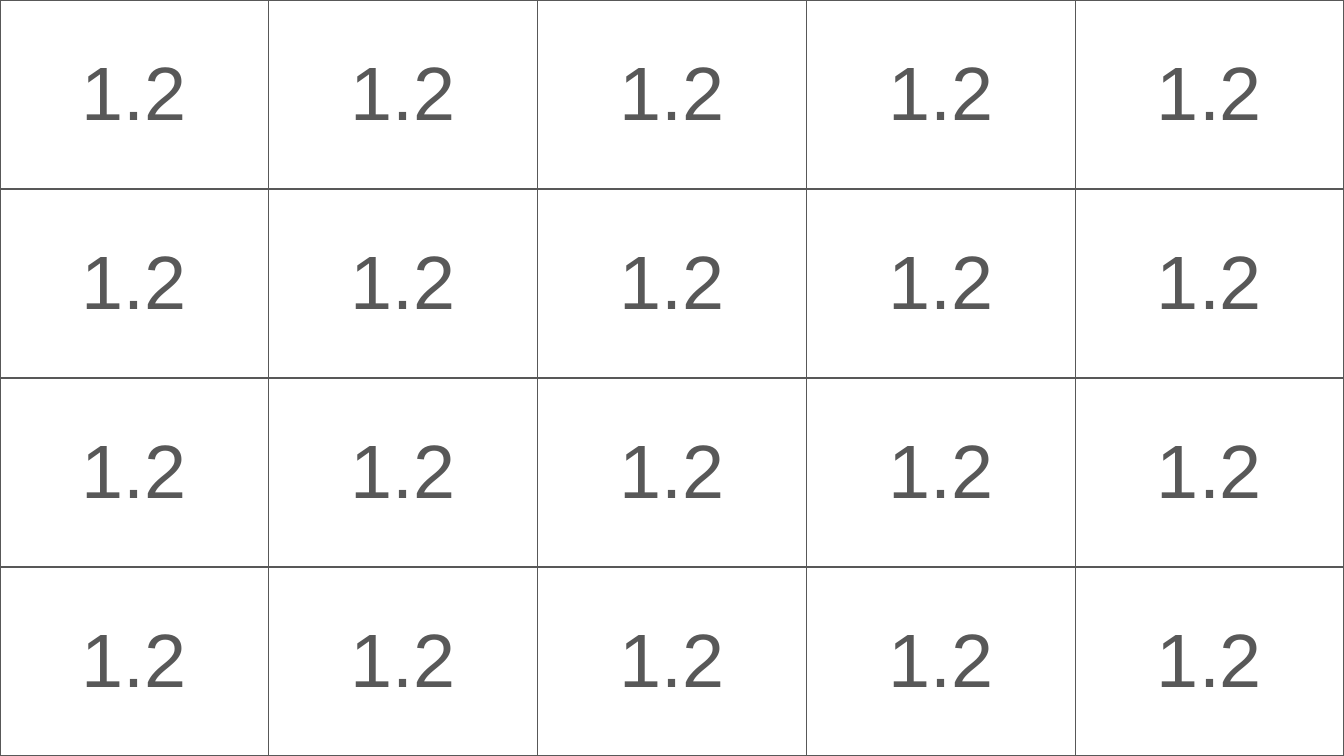
from dataclasses import dataclass

from lxml.etree import SubElement
from pptx import Presentation
from pptx.dml.color import RGBColor
from pptx.enum.text import MSO_ANCHOR, PP_ALIGN
from pptx.oxml.ns import qn
from pptx.slide import Slide
from pptx.table import Table, _Cell
from pptx.util import Inches, Pt


@dataclass(frozen=True)
class Theme:
    ink: str = "585858"
    font: str = "Arial"
    label_size: int = 54
    border_width: int = 1


@dataclass(frozen=True)
class LabelGrid:
    label: str
    rows: int
    columns: int
    width: float
    height: float


THEME = Theme()
LABELS = LabelGrid(label="1.2", rows=4, columns=5, width=13.33, height=7.5)
CELL_FORMAT = {
    "vertical_anchor": MSO_ANCHOR.MIDDLE,
    "margin_left": Inches(0.1),
    "margin_right": Inches(0.1),
    "margin_top": Inches(0.05),
    "margin_bottom": Inches(0.05),
}
FONT_FORMAT = {"name": THEME.font, "size": Pt(THEME.label_size), "bold": False}


def set_format(target: object, values: dict[str, object]) -> None:
    for name, value in values.items():
        setattr(target, name, value)


def add_borders(cell: _Cell) -> None:
    properties = cell._tc.get_or_add_tcPr()
    for side in ("lnL", "lnR", "lnT", "lnB"):
        border = SubElement(properties, qn(f"a:{side}"), w=str(Pt(THEME.border_width)))
        fill = SubElement(border, qn("a:solidFill"))
        SubElement(fill, qn("a:srgbClr"), val=THEME.ink)


def write_label(cell: _Cell, label: str) -> None:
    set_format(cell, CELL_FORMAT)
    add_borders(cell)
    cell.fill.background()
    paragraph = cell.text_frame.paragraphs[0]
    paragraph.alignment = PP_ALIGN.CENTER
    run = paragraph.add_run()
    run.text = label
    set_format(run.font, FONT_FORMAT)
    run.font.color.rgb = RGBColor.from_string(THEME.ink)


def add_label_grid(slide: Slide, grid: LabelGrid) -> Table:
    table = slide.shapes.add_table(
        grid.rows, grid.columns, 0, 0, Inches(grid.width), Inches(grid.height)
    ).table
    set_format(table, {"first_row": False, "horz_banding": False})
    for cell in table.iter_cells():
        write_label(cell, grid.label)
    return table


def main() -> None:
    presentation = Presentation()
    presentation.slide_width = Inches(LABELS.width)
    presentation.slide_height = Inches(LABELS.height)
    slide = presentation.slides.add_slide(presentation.slide_layouts[6])
    add_label_grid(slide, LABELS)
    presentation.save("out.pptx")


if __name__ == "__main__":
    main()
